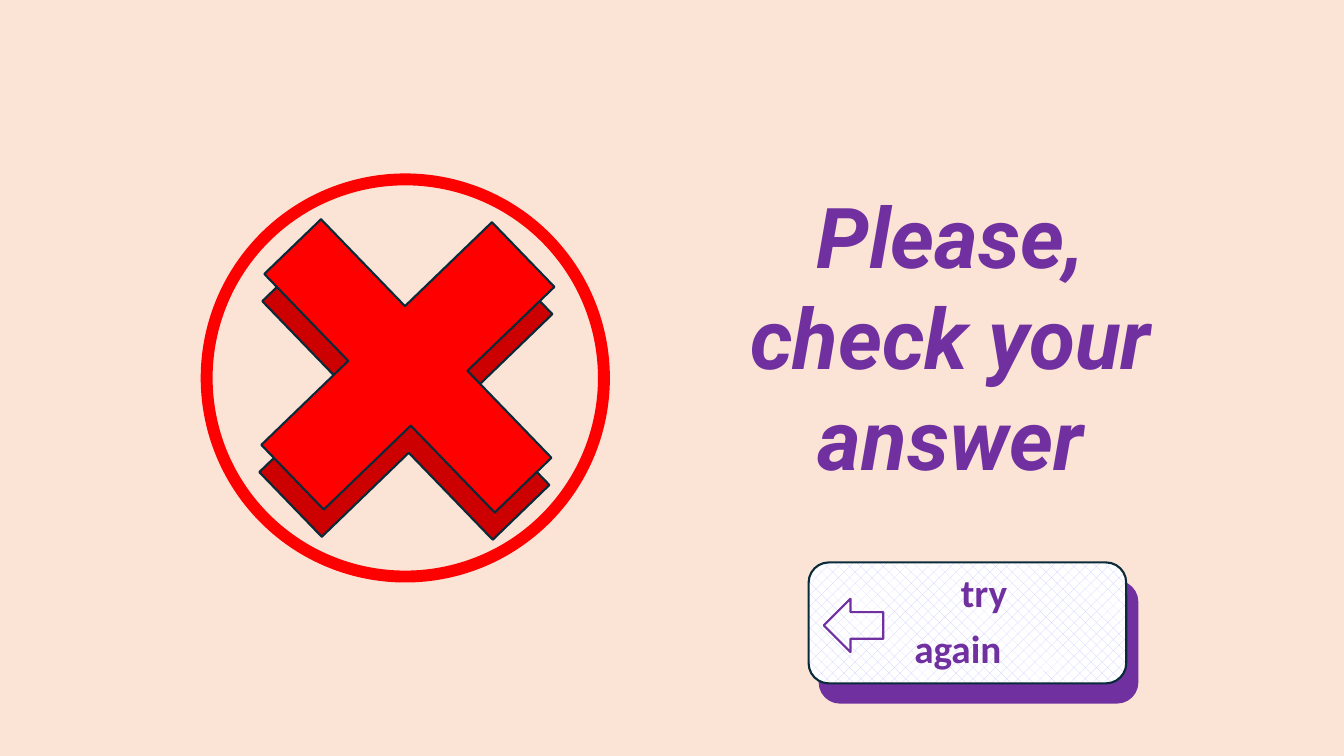
import pptx
import pptx.dml.color
import pptx.enum.dml
import pptx.enum.shapes
import pptx.enum.text
import pptx.oxml
import pptx.oxml.ns
import pptx.util

PX = 9144
COLORS = {
    "peach": "FBE3D6",
    "purple": "7030A0",
    "red": "FF0000",
    "dark_red": "CC0000",
    "ink": "092A39",
    "lilac": "CCCCFF",
    "white": "FFFFFF",
}
SHAPE = pptx.enum.shapes.MSO_SHAPE
CENTER = pptx.enum.text.PP_ALIGN.CENTER


def rgb(name):
    return pptx.dml.color.RGBColor.from_string(COLORS[name])


class SlideBuilder:
    """Holds the style and the current slide, and adds its elements."""

    def __init__(self, prs):
        self.slide = prs.slides.add_slide(prs.slide_layouts[5])
        fill = self.slide.background.fill
        fill.solid()
        fill.fore_color.rgb = rgb("peach")

    def run(self, p, text, font, size, italic=False):
        r = p.add_run()
        r.text = text
        r.font.name = font
        r.font.size = pptx.util.Pt(size)
        r.font.bold = True
        r.font.italic = italic
        r.font.color.rgb = rgb("purple")
        return r

    def title(self, box, lines):
        sp = self.slide.shapes.title
        sp.left, sp.top, sp.width, sp.height = (v * PX for v in box)
        tf = sp.text_frame
        tf.word_wrap = False
        tf.auto_size = pptx.enum.text.MSO_AUTO_SIZE.SHAPE_TO_FIT_TEXT
        tf.vertical_anchor = pptx.enum.text.MSO_ANCHOR.TOP
        for i, line in enumerate(lines):
            p = tf.add_paragraph() if i else tf.paragraphs[0]
            p.alignment = CENTER
            p.line_spacing = 1.0
            p.space_before = pptx.util.Pt(0)
            r = self.run(p, line, "Roboto", 60, italic=True)
            outline = pptx.oxml.parse_xml(
                f'<a:ln {pptx.oxml.ns.nsdecls("a")} w="12700"><a:solidFill>'
                f'<a:srgbClr val="{COLORS["purple"]}"/></a:solidFill></a:ln>')
            r.font._element.insert(0, outline)

    def shape(self, kind, box, line, width=1.5, fill=None, rotation=0, adj=None):
        sp = self.slide.shapes.add_shape(kind, *(v * PX for v in box))
        sp.shadow.inherit = False
        sp.rotation = rotation
        if adj is not None:
            sp.adjustments[0] = adj
        if fill:
            sp.fill.solid()
            sp.fill.fore_color.rgb = rgb(fill)
        else:
            sp.fill.background()
        sp.line.color.rgb = rgb(line)
        sp.line.width = pptx.util.Pt(width)
        return sp

    def button(self, box, lines):
        sp = self.shape(SHAPE.ROUNDED_RECTANGLE, box, "ink")
        sp.fill.patterned()
        sp.fill.pattern = pptx.enum.dml.MSO_PATTERN.PERCENT_25
        sp.fill.fore_color.rgb = rgb("lilac")
        sp.fill.back_color.rgb = rgb("white")
        tf = sp.text_frame
        tf.word_wrap = True
        tf.vertical_anchor = pptx.enum.text.MSO_ANCHOR.MIDDLE
        for i, (text, side, indent) in enumerate(lines):
            p = tf.add_paragraph() if i else tf.paragraphs[0]
            p.alignment = CENTER
            p.line_spacing = 0.9
            p.space_before = pptx.util.Pt(10)
            p._p.get_or_add_pPr().set(side, str(indent * PX))
            self.run(p, text, "Calibri", 28)


def main():
    prs = pptx.Presentation()
    prs.slide_width, prs.slide_height = 1333 * PX, 750 * PX
    s = SlideBuilder(prs)

    s.title((724, 178, 458, 313), ["Please, ", "check your ", "answer "])

    s.shape(SHAPE.FLOWCHART_CONNECTOR, (205, 178, 394, 394), "red", 8.5)
    for left, top, fill in ((238, 231, "dark_red"), (240, 204, "red")):
        s.shape(SHAPE.CROSS, (left, top, 329, 318), "ink",
                fill=fill, rotation=46, adj=0.377)

    s.shape(SHAPE.ROUNDED_RECTANGLE, (813, 577, 315, 120), "purple", fill="purple")
    s.button((802, 558, 315, 120), [("try", "marL", 33), ("again", "marR", 19)])
    s.shape(SHAPE.LEFT_ARROW, (817, 594, 59, 53), "purple")

    prs.save("out.pptx")


if __name__ == "__main__":
    main()
